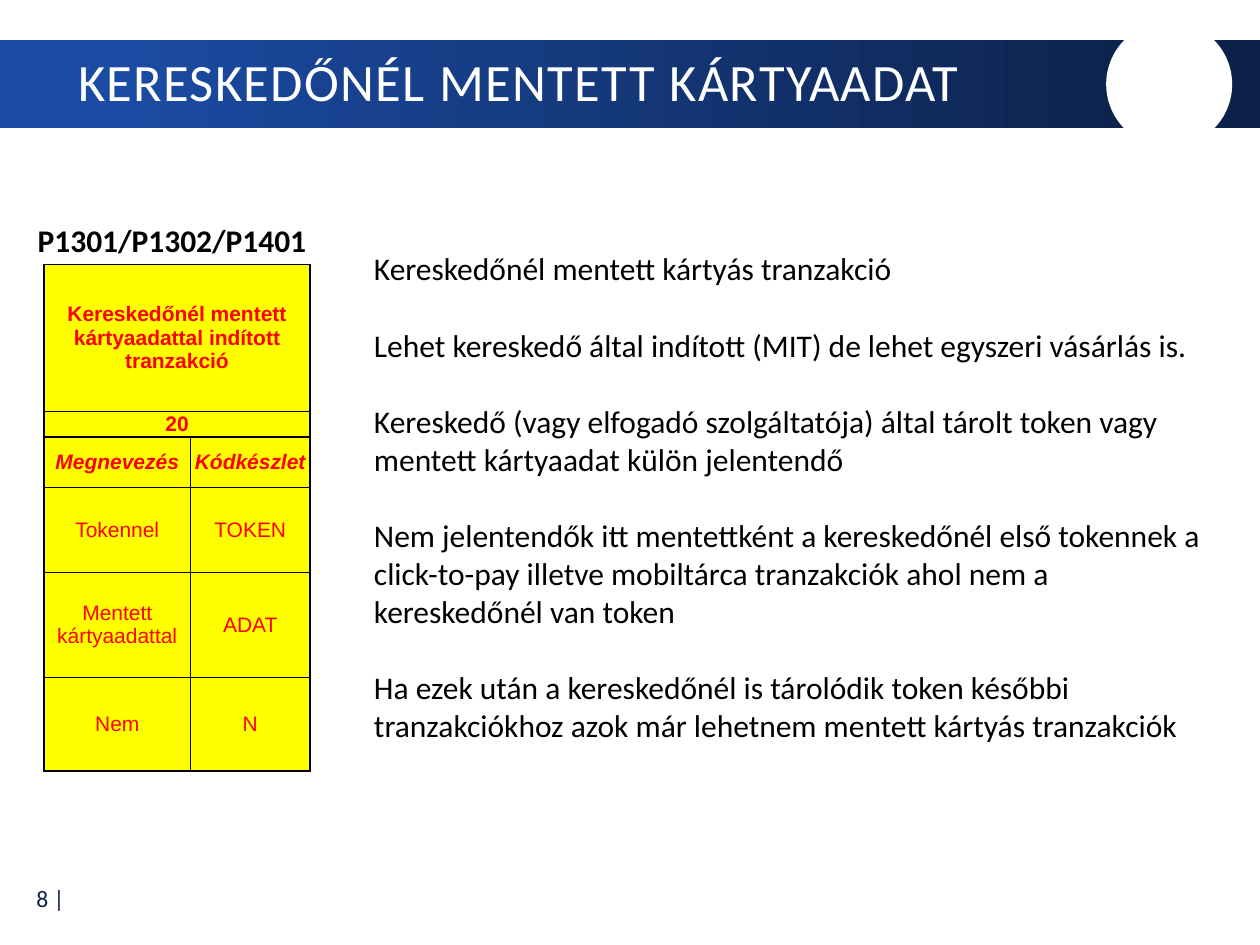
from dataclasses import dataclass

from lxml import etree
from pptx import Presentation
from pptx import util as u
from pptx.dml import color
from pptx.enum import shapes, text
from pptx.oxml import ns


@dataclass(frozen=True)
class Theme:
    blue: str = "1B4BA3"
    navy: str = "0C2148"
    white: str = "FFFFFF"
    black: str = "000000"
    yellow: str = "FFFF00"
    red: str = "FF0000"
    main_font: str = "Calibri"
    table_font: str = "Arial"
    title_size: float = 30
    body_size: float = 18
    page_size: float = 13.5
    table_size: float = 12
    paragraph_gap: float = 22
    heavy_line: float = 1
    light_line: float = 0.5


THEME = Theme()
TITLE = "KERESKEDŐNÉL MENTETT KÁRTYAADAT"
HEADER_ROWS = 3
CODE_ROWS = [
    ["Kereskedőnél mentett kártyaadattal indított tranzakció"],
    ["20"],
    ["Megnevezés", "Kódkészlet"],
    ["Tokennel", "TOKEN"],
    ["Mentett kártyaadattal", "ADAT"],
    ["Nem", "N"],
]
COLUMN_WIDTHS = [2.95, 2.41]
ROW_HEIGHTS = [2.97, 0.51, 1.02, 1.7, 2.13, 1.88]
EXPLANATIONS = [
    "Kereskedőnél mentett kártyás tranzakció",
    "Lehet kereskedő által indított (MIT) de lehet egyszeri vásárlás is.",
    "Kereskedő (vagy elfogadó szolgáltatója) által tárolt token vagy "
    "mentett kártyaadat külön jelentendő",
    "Nem jelentendők itt mentettként a kereskedőnél első tokennek a "
    "click-to-pay illetve mobiltárca tranzakciók ahol nem a kereskedőnél van token",
    "Ha ezek után a kereskedőnél is tárolódik token későbbi "
    "tranzakciókhoz azok már lehetnem mentett kártyás tranzakciók",
]


def rgb(value):
    return color.RGBColor.from_string(value)


def box(*lengths):
    return [u.Cm(length) for length in lengths]


def apply(target, values):
    for name, value in values.items():
        setattr(target, name, value)


def format_font(font, ink, **values):
    apply(font, values)
    font.color.rgb = rgb(ink)


def add_plain_shape(slide, kind, bounds):
    shape = slide.shapes.add_shape(kind, *box(*bounds))
    shape.shadow.inherit = False
    shape.line.fill.background()
    return shape


def add_header(slide):
    band = add_plain_shape(slide, shapes.MSO_SHAPE.RECTANGLE, (0, 0.81, 25.4, 1.78))
    band.fill.gradient()
    band.fill.gradient_angle = 0
    stops = [(0.09, THEME.blue), (0.95, THEME.navy)]
    for stop, (position, ink) in zip(band.fill.gradient_stops, stops):
        stop.position = position
        stop.color.rgb = rgb(ink)
    circle = add_plain_shape(slide, shapes.MSO_SHAPE.OVAL, (22.3, 0.43, 2.54, 2.54))
    circle.fill.solid()
    circle.fill.fore_color.rgb = rgb(THEME.white)


def format_title(slide):
    title = slide.shapes.title
    slide.shapes.element.append(title.element)
    apply(title, dict(zip(("left", "top", "width", "height"), box(1.32, 0.86, 21.13, 1.7))))
    frame = title.text_frame
    frame.text = TITLE
    apply(frame, {"auto_size": text.MSO_AUTO_SIZE.NONE, "word_wrap": True,
                  "vertical_anchor": text.MSO_ANCHOR.MIDDLE})
    paragraph = frame.paragraphs[0]
    apply(paragraph, {"alignment": text.PP_ALIGN.LEFT, "line_spacing": 0.9})
    run = paragraph.runs[0]
    format_font(run.font, THEME.white, name=THEME.main_font, size=u.Pt(THEME.title_size))
    run._r.get_or_add_rPr().set("spc", "80")


def add_text(slide, bounds, lines, size, ink=THEME.black, bold=False,
             alignment=text.PP_ALIGN.LEFT, **frame_values):
    frame = slide.shapes.add_textbox(*box(*bounds)).text_frame
    apply(frame, {"word_wrap": True, **frame_values})
    for index, line in enumerate(lines):
        paragraph = frame.add_paragraph() if index else frame.paragraphs[0]
        run = paragraph.add_run()
        run.text = line
        paragraph.alignment = alignment
        if index:
            paragraph.space_before = u.Pt(THEME.paragraph_gap)
        format_font(run.font, ink, name=THEME.main_font, size=u.Pt(size), bold=bold)


def add_border(cell, side, heavy):
    width = u.Pt(THEME.heavy_line if heavy else THEME.light_line)
    line = etree.SubElement(cell._tc.get_or_add_tcPr(), ns.qn(f"a:ln{side}"), w=str(width))
    fill = etree.SubElement(line, ns.qn("a:solidFill"))
    etree.SubElement(fill, ns.qn("a:srgbClr"), val=THEME.black)


def format_cell(cell, row, column):
    header = row < HEADER_ROWS
    heavy_sides = {
        "L": header or column == 0,
        "R": header or column == len(COLUMN_WIDTHS) - 1,
        "T": row <= HEADER_ROWS,
        "B": header or row == len(CODE_ROWS) - 1,
    }
    for side, heavy in heavy_sides.items():
        add_border(cell, side, heavy)
    cell.fill.solid()
    cell.fill.fore_color.rgb = rgb(THEME.yellow)
    margins = ("margin_left", "margin_right", "margin_top", "margin_bottom")
    apply(cell, {"vertical_anchor": text.MSO_ANCHOR.MIDDLE, **dict.fromkeys(margins, 0)})
    paragraph = cell.text_frame.paragraphs[0]
    paragraph.alignment = text.PP_ALIGN.CENTER
    format_font(paragraph.font, THEME.red, name=THEME.table_font,
                size=u.Pt(THEME.table_size), bold=header, italic=row == HEADER_ROWS - 1)
    for run in paragraph.runs:
        format_font(run.font, THEME.red, name=THEME.table_font,
                    size=u.Pt(THEME.table_size), bold=header, italic=row == HEADER_ROWS - 1)


def add_code_table(slide):
    bounds = box(0.89, 5.33, sum(COLUMN_WIDTHS), sum(ROW_HEIGHTS))
    table = slide.shapes.add_table(len(CODE_ROWS), len(COLUMN_WIDTHS), *bounds).table
    apply(table, {"first_row": False, "horz_banding": False})
    for column, width in zip(table.columns, COLUMN_WIDTHS):
        column.width = u.Cm(width)
    for row, (labels, height) in enumerate(zip(CODE_ROWS, ROW_HEIGHTS)):
        table.rows[row].height = u.Cm(height)
        for column, label in enumerate(labels):
            table.cell(row, column).text = label
        for column in range(len(COLUMN_WIDTHS)):
            format_cell(table.cell(row, column), row, column)
        if len(labels) == 1:
            table.cell(row, 0).merge(table.cell(row, len(COLUMN_WIDTHS) - 1))


def main():
    presentation = Presentation()
    apply(presentation, {"slide_width": u.Cm(25.4), "slide_height": u.Cm(19.05)})
    slide = presentation.slides.add_slide(presentation.slide_layouts.get_by_name("Title Only"))
    add_text(slide, (0.03, 17.63, 1.52, 0.94), ["8 |"], THEME.page_size, THEME.navy,
             alignment=text.PP_ALIGN.RIGHT, vertical_anchor=text.MSO_ANCHOR.MIDDLE)
    add_header(slide)
    format_title(slide)
    add_code_table(slide)
    grow = text.MSO_AUTO_SIZE.SHAPE_TO_FIT_TEXT
    add_text(slide, (7.29, 4.9, 17.5, 10.26), EXPLANATIONS, THEME.body_size, auto_size=grow)
    add_text(slide, (0.51, 4.34, 6.17, 1.02), ["P1301/P1302/P1401"], THEME.body_size,
             bold=True, auto_size=grow)
    presentation.save("out.pptx")


if __name__ == "__main__":
    main()
